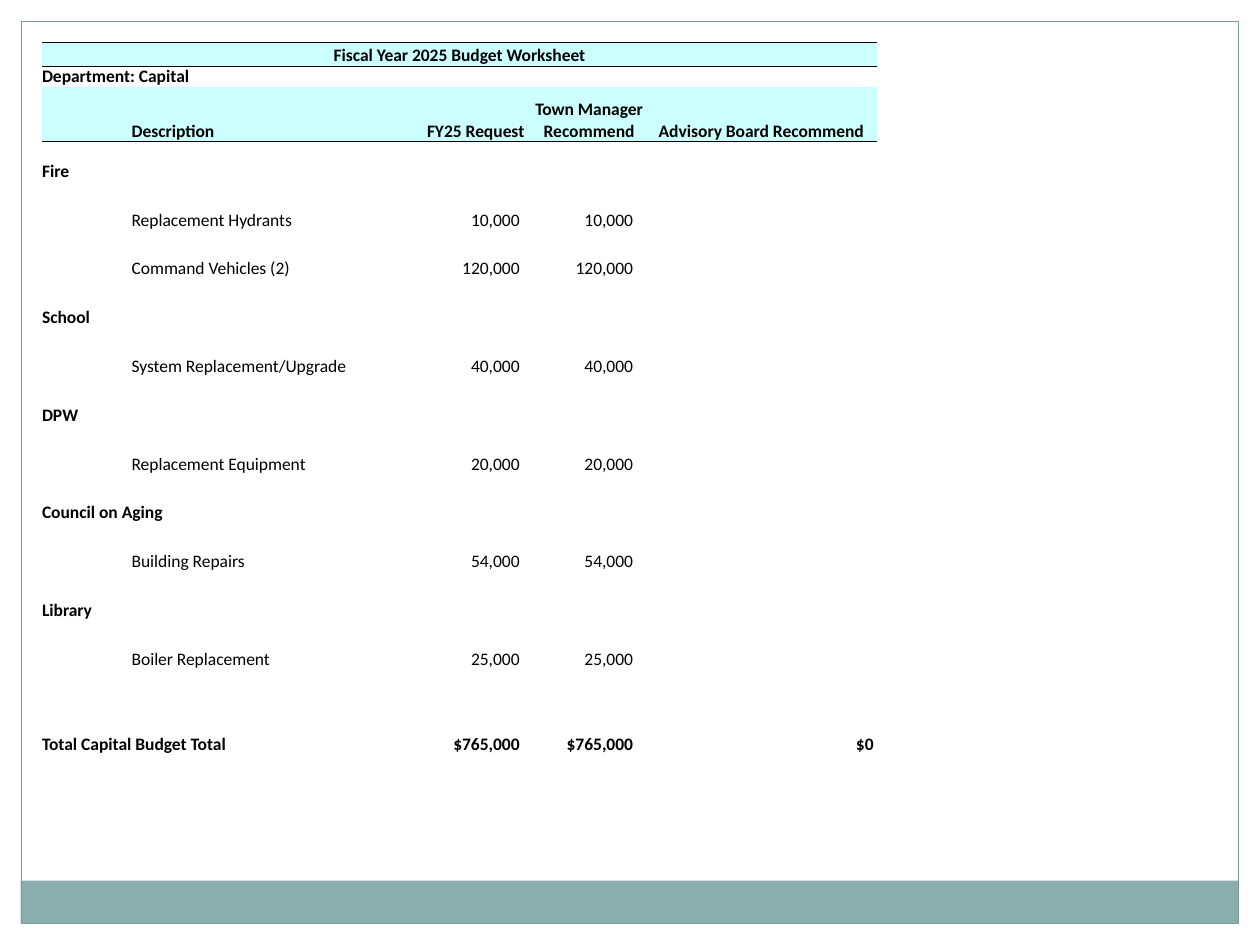
from lxml import etree
from pptx import Presentation
from pptx.dml.color import RGBColor
from pptx.enum.shapes import MSO_SHAPE
from pptx.enum.text import MSO_ANCHOR, PP_ALIGN
from pptx.oxml.ns import qn
from pptx.util import Pt

RECTANGLE = MSO_SHAPE.RECTANGLE
BOTTOM = MSO_ANCHOR.BOTTOM
LEFT, CENTER, RIGHT = PP_ALIGN.LEFT, PP_ALIGN.CENTER, PP_ALIGN.RIGHT

COLORS = {"text": "000000", "header": "CCFFFF", "band": "8CADAE", "frame": "7C999A"}
FONT_SIZE = 10
NUMBER_INSET = 2.3
BLANK = [""] * 6


def add_grid(page, top, widths, heights):
    frame = page.shapes.add_table(
        len(heights), len(widths), Pt(24), Pt(top), Pt(sum(widths)), Pt(sum(heights))
    )
    table = frame.table
    table.first_row = table.horz_banding = False
    for column, width in zip(table.columns, widths):
        column.width = Pt(width)
    for row, height in zip(table.rows, heights):
        row.height = Pt(height)
    return table


def format_cell(cell, text, bold, align, fill=None, lines=""):
    cell.margin_left = cell.margin_top = cell.margin_bottom = 0
    cell.margin_right = Pt(NUMBER_INSET) if align == RIGHT else 0
    cell.vertical_anchor = BOTTOM
    properties = cell._tc.get_or_add_tcPr()
    for side in "LRTB":
        line = etree.SubElement(properties, qn(f"a:ln{side}"), w=str(Pt(0.5)))
        if side in lines:
            solid = etree.SubElement(line, qn("a:solidFill"))
            etree.SubElement(solid, qn("a:srgbClr"), val=COLORS["text"])
        else:
            etree.SubElement(line, qn("a:noFill"))
    if fill:
        cell.fill.solid()
        cell.fill.fore_color.rgb = RGBColor.from_string(COLORS[fill])
    else:
        cell.fill.background()
    para = cell.text_frame.paragraphs[0]
    para.alignment = align
    para.font.name = "Calibri"
    para.font.size = Pt(FONT_SIZE)
    para.font.bold = bold
    para.font.color.rgb = RGBColor.from_string(COLORS["text"])
    if text:
        para.add_run().text = text
    else:
        etree.SubElement(para._p, qn("a:endParaRPr"), sz=str(FONT_SIZE * 100))


deck = Presentation()
deck.slide_width, deck.slide_height = Pt(720), Pt(540)
page = deck.slides.add_slide(deck.slide_layouts[6])

band = page.shapes.add_shape(RECTANGLE, Pt(11.8), Pt(503.3), Pt(695.8), Pt(24.5))
band.fill.solid()
band.fill.fore_color.rgb = RGBColor.from_string(COLORS["band"])
band.line.fill.background()
band.shadow.inherit = False

border = page.shapes.add_shape(RECTANGLE, Pt(12.2), Pt(12.2), Pt(695.6), Pt(515.6))
border.fill.background()
border.line.color.rgb = RGBColor.from_string(COLORS["frame"])
border.line.width = Pt(0.75)
border.shadow.inherit = False

header_rows = [
    (["Fiscal Year 2025 Budget Worksheet"] + BLANK[1:], "header", "TB"),
    (["Department: Capital"] + BLANK[1:], None, "T"),
    (["", "Description", "", "FY25 Request", "Town Manager Recommend",
      "Advisory Board Recommend"], "header", "B"),
]
header = add_grid(page, 24, [51.2, 114.5, 49.7, 64.8, 64.8, 132], [13.8, 12.2, 31])
header.cell(0, 0).merge(header.cell(0, 5))
header.cell(1, 0).merge(header.cell(1, 1))
for row, (texts, fill, lines) in enumerate(header_rows):
    for column, text in enumerate(texts):
        centered = row == 0 or column > 2
        format_cell(header.cell(row, column), text, True,
                    CENTER if centered else LEFT, fill, lines)

departments = [
    ("Fire", [("Replacement Hydrants", "10,000"), ("Command Vehicles (2)", "120,000")]),
    ("School", [("System Replacement/Upgrade", "40,000")]),
    ("DPW", [("Replacement Equipment", "20,000")]),
    ("Council on Aging", [("Building Repairs", "54,000")]),
    ("Library", [("Boiler Replacement", "25,000")]),
]
SINGLE, DOUBLE, GAP = 13.95, 27.9, 34.6
budget_rows = []
for department, items in departments:
    budget_rows.append(([department] + BLANK[1:], SINGLE))
    for item, amount in items:
        budget_rows.append((["", item, "", amount, amount, ""], DOUBLE))
    budget_rows.append((BLANK, SINGLE))
budget_rows[-1] = (BLANK, GAP)
budget_rows.append(
    (["Total Capital Budget Total", "", "", "$765,000", "$765,000", "$0"], SINGLE)
)

budget = add_grid(page, 90, [51.2, 114.5, 49.7, 59.8, 64.8, 137.5],
                  [height for texts, height in budget_rows])
for row, (texts, height) in enumerate(budget_rows):
    if texts[0] in ("Council on Aging", "Total Capital Budget Total"):
        budget.cell(row, 0).merge(budget.cell(row, 1))
    if texts[1] == "System Replacement/Upgrade":
        budget.cell(row, 1).merge(budget.cell(row, 2))
    for column, text in enumerate(texts):
        format_cell(budget.cell(row, column), text, bool(texts[0]),
                    RIGHT if column > 2 else LEFT)

deck.save("out.pptx")
